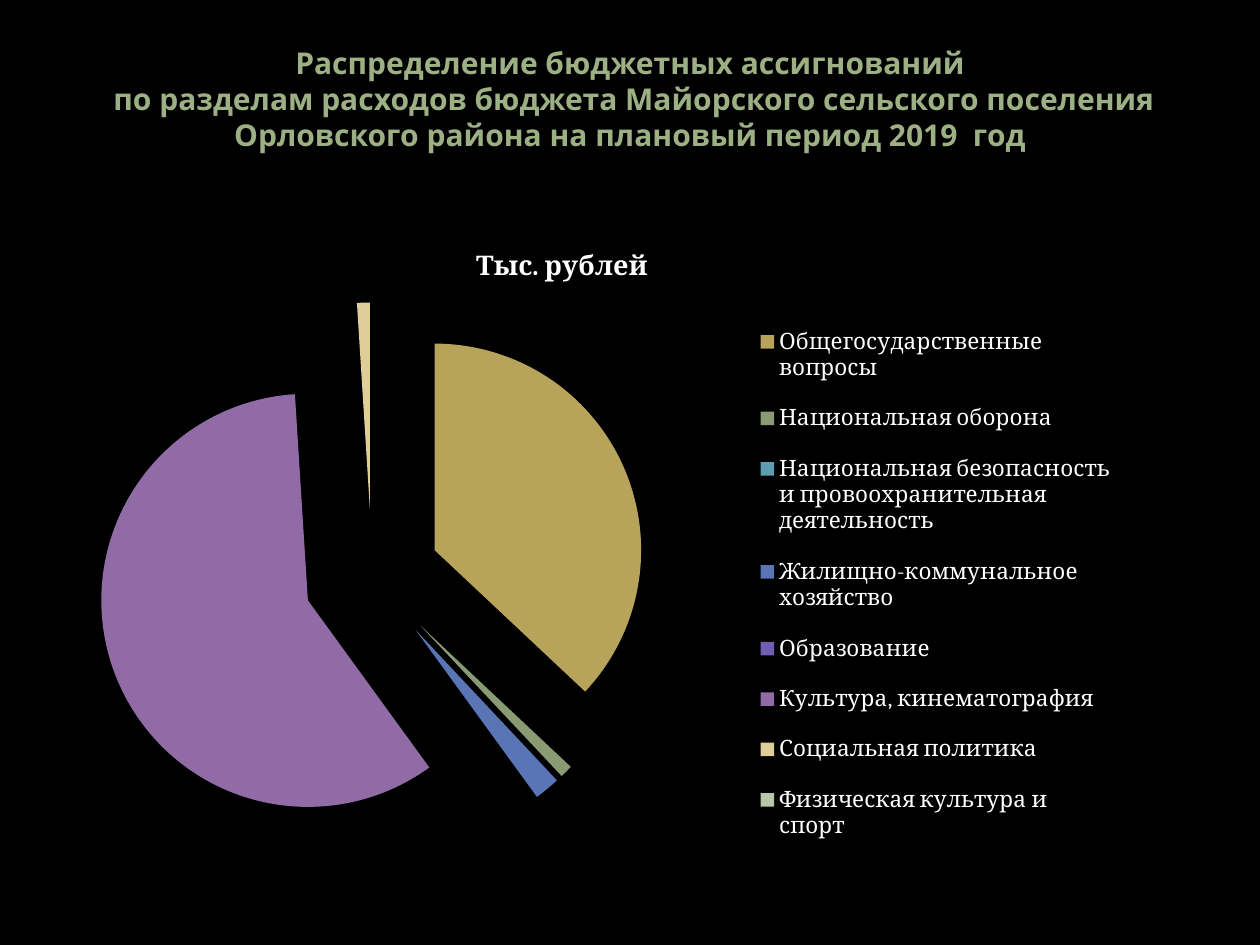
from lxml import etree
from pptx import Presentation
from pptx.chart.data import CategoryChartData
from pptx.dml.color import RGBColor
from pptx.enum.chart import XL_CHART_TYPE, XL_LEGEND_POSITION
from pptx.enum.text import MSO_ANCHOR, PP_ALIGN
from pptx.oxml import parse_xml
from pptx.oxml.ns import nsdecls, qn
from pptx.util import Pt

PIE = XL_CHART_TYPE.PIE
RIGHT = XL_LEGEND_POSITION.RIGHT
BOTTOM = MSO_ANCHOR.BOTTOM
CENTER = PP_ALIGN.CENTER

COLORS = {"background": "000000", "title": "9CB084", "chart_text": "FFFFFF"}

TITLE_LINES = [
    "Распределение бюджетных ассигнований",
    " по разделам расходов бюджета Майорского сельского поселения "
    "Орловского района на плановый период 2019  год",
]
CHART_TITLE = "Тыс. рублей"

# Budget section, value, slice colour
SECTIONS = [
    ("Общегосударственные вопросы", 37, "B8A35A"),
    ("Национальная оборона", 1, "8A9B74"),
    ("Национальная безопасность и провоохранительная деятельность", 0, "5E9CB1"),
    ("Жилищно-коммунальное хозяйство", 2, "5975B6"),
    ("Образование", 0, "6F5EB1"),
    ("Культура, кинематография", 59, "916BA6"),
    ("Социальная политика", 1, "DFCE98"),
    ("Физическая культура и спорт", 0, "B8C7A8"),
]


class Slide:
    title_font = "Open Sans"
    chart_font = "Cambria"

    def __init__(self, page):
        self.page = page
        fill = page.background.fill
        fill.solid()
        fill.fore_color.rgb = RGBColor.from_string(COLORS["background"])

    def style(self, font, name, size, color, bold=False):
        font.name = name
        font.size = Pt(size)
        font.bold = bold
        font.color.rgb = RGBColor.from_string(COLORS[color])

    def title(self, lines, left, top, width, height):
        box = self.page.shapes.add_textbox(Pt(left), Pt(top), Pt(width), Pt(height))
        frame = box.text_frame
        frame.word_wrap = True
        frame.vertical_anchor = BOTTOM
        frame.margin_left = frame.margin_right = Pt(10)
        frame.margin_top, frame.margin_bottom = Pt(5), Pt(34)
        para = frame.paragraphs[0]
        para.alignment = CENTER
        for index, line in enumerate(lines):
            if index:
                para.add_line_break()
            span = para.add_run()
            span.text = line
            self.style(span.font, self.title_font, 24, "title", True)

    def layout(self, x, y, w, h, inner=False):
        """Manual chart layout, in fractions of the chart."""
        layout = parse_xml(f"<c:layout {nsdecls('c')}><c:manualLayout/></c:layout>")
        settings = [("layoutTarget", "inner")] if inner else []
        settings += [("xMode", "edge"), ("yMode", "edge"),
                     ("x", x), ("y", y), ("w", w), ("h", h)]
        for tag, value in settings:
            etree.SubElement(layout[0], qn(f"c:{tag}"), val=str(value))
        return layout

    def pie(self, name, sections, explosion, left, top, width, height):
        data = CategoryChartData()
        data.categories = [label for label, _, _ in sections]
        data.add_series(name, [value for _, value, _ in sections])
        chart = self.page.shapes.add_chart(
            PIE, Pt(left), Pt(top), Pt(width), Pt(height), data).chart
        self.style(chart.font, self.chart_font, 18, "chart_text")

        # Heading
        chart.has_title = True
        span = chart.chart_title.text_frame.paragraphs[0].add_run()
        span.text = name
        self.style(span.font, self.chart_font, 21.6, "chart_text", True)

        # Legend
        chart.has_legend = True
        legend = chart.legend
        legend.position = RIGHT
        legend.include_in_layout = False
        self.style(legend.font, self.chart_font, 18, "chart_text")

        # Slices
        plot = chart.plots[0]
        plot.vary_by_categories = True
        series = plot.series[0]
        for index, (_, _, color) in enumerate(sections):
            slice_format = series.points[index].format
            slice_format.fill.solid()
            slice_format.fill.fore_color.rgb = RGBColor.from_string(color)
            slice_format.line.fill.background()

        # Explosion, transparent chart area and fixed layout
        space = chart.element
        space.find(".//" + qn("c:dPt")).addprevious(
            parse_xml(f'<c:explosion {nsdecls("c")} val="{explosion}"/>'))
        space.find(qn("c:txPr")).addprevious(parse_xml(
            f"<c:spPr {nsdecls('c', 'a')}><a:noFill/><a:ln><a:noFill/></a:ln></c:spPr>"))
        area = space.find(".//" + qn("c:plotArea"))
        for old in area.findall(qn("c:layout")):
            area.remove(old)
        area.insert(0, self.layout(0.086, 0.12, 0.49, 0.86, inner=True))
        key = space.find(".//" + qn("c:legend"))
        for old in key.findall(qn("c:layout")):
            key.remove(old)
        key.find(qn("c:legendPos")).addnext(self.layout(0.68, 0.123, 0.315, 0.875))


def main():
    deck = Presentation()
    deck.slide_width, deck.slide_height = Pt(1008), Pt(756)
    slide = Slide(deck.slides.add_slide(deck.slide_layouts[6]))
    slide.title(TITLE_LINES, 50.4, 30.24, 907.2, 126)
    slide.pie(CHART_TITLE, SECTIONS, 33, 0, 180.7, 899.3, 511.2)
    deck.save("out.pptx")


if __name__ == "__main__":
    main()
